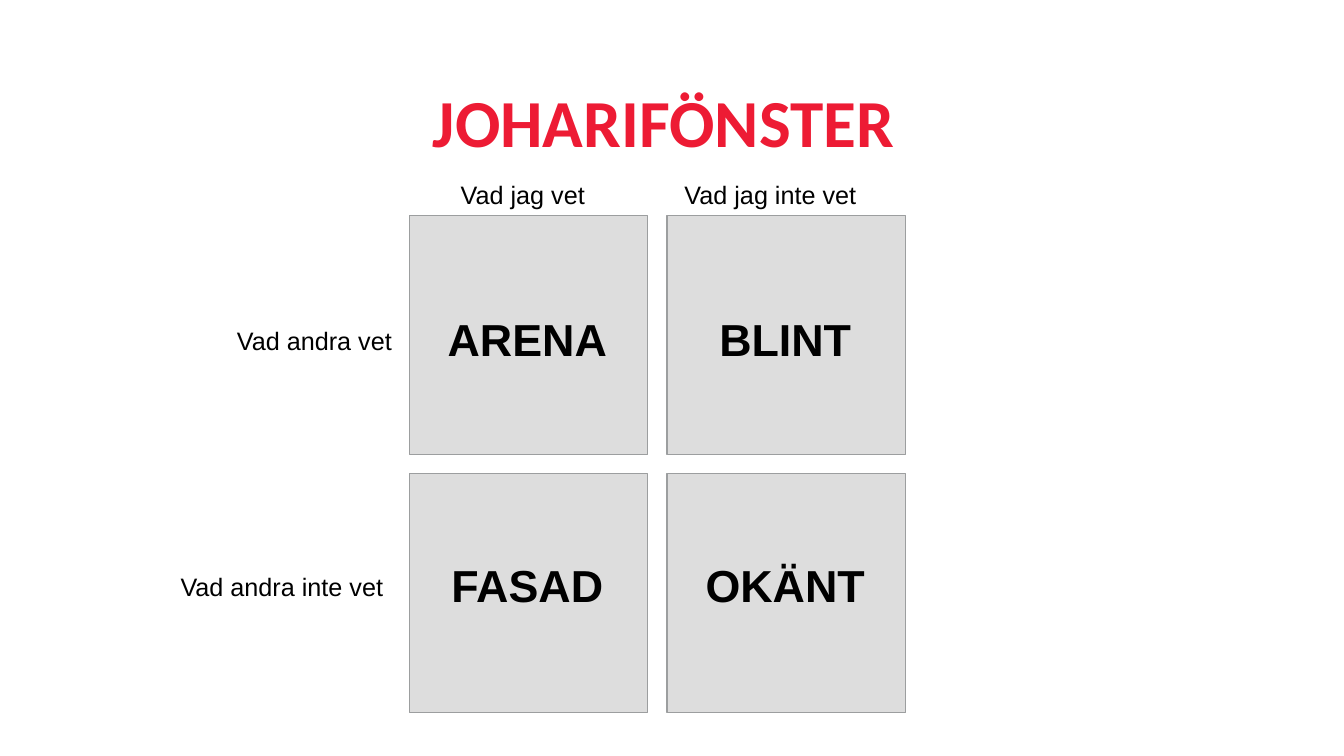
from pptx import Presentation
from pptx.dml.color import RGBColor
from pptx.enum.shapes import MSO_SHAPE as Kind
from pptx.enum.text import MSO_ANCHOR as Anchor, MSO_AUTO_SIZE as Fit, PP_ALIGN as Align
from pptx.util import Cm, Pt

RED, BLACK, GREY, EDGE = "ED1B34", "000000", "DDDDDD", "9C9E9F"

# Window grid in centimetres
LEFT, TOP, SIDE, STEP = 10.31, 5.44, 6.02, 6.5
WORDS = [["ARENA", "BLINT"], ["FASAD", "OKÄNT"]]
# Axis labels: text, left, top, width
LABELS = [
    ("Vad jag vet", 11.28, 4.19, 4.37),
    ("Vad jag inte vet", 16.92, 4.19, 5.23),
    ("Vad andra vet", 5.64, 7.87, 4.78),
    ("Vad andra inte vet", 4.22, 14.07, 6.02),
]


def color(code):
    return RGBColor.from_string(code)


def place(shape, left, top, width, height):
    shape.left, shape.top = Cm(left), Cm(top)
    shape.width, shape.height = Cm(width), Cm(height)


def write(shape, text, size, tint=BLACK, bold=False, align=Align.LEFT,
          anchor=Anchor.TOP, face="Arial"):
    frame = shape.text_frame
    frame.word_wrap = True
    frame.auto_size = Fit.NONE
    frame.vertical_anchor = anchor
    frame.margin_left = frame.margin_right = Cm(0.33)
    frame.margin_top = frame.margin_bottom = Cm(0.33)
    para = frame.paragraphs[0]
    para.text = text
    para.alignment = align
    font = para.font
    font.name, font.size, font.bold = face, Pt(size), bold
    font.color.rgb = color(tint)
    return para


def add_title(slide, text):
    title = slide.shapes.title
    place(title, 1.14, 0.79, 31.55, 3.58)
    para = write(title, text, 48, RED, True, Align.CENTER, Anchor.BOTTOM, "Calibri")
    para.line_spacing = 0.8


def add_pane(slide, left, top):
    pane = slide.shapes.add_shape(Kind.RECTANGLE, Cm(left), Cm(top), Cm(SIDE), Cm(SIDE))
    pane.shadow.inherit = False
    pane.fill.solid()
    pane.fill.fore_color.rgb = color(GREY)
    pane.line.color.rgb = color(EDGE)
    pane.line.width = Pt(0.75)


def add_text(slide, text, left, top, width, height, size, **style):
    box = slide.shapes.add_textbox(Cm(left), Cm(top), Cm(width), Cm(height))
    write(box, text, size, **style)


def main():
    deck = Presentation()
    deck.slide_width, deck.slide_height = Cm(33.87), Cm(19.05)
    slide = deck.slides.add_slide(deck.slide_layouts[5])
    add_title(slide, "JOHARIFÖNSTER ")

    # Four panes with their words
    for row, words in enumerate(WORDS):
        for col, word in enumerate(words):
            add_pane(slide, LEFT + col * STEP, TOP + row * STEP)
            add_text(slide, word, 8.31 + col * STEP, 7.52 + row * 6.2, 9.96, 1.5,
                     32, bold=True, align=Align.CENTER)

    # Labels above and beside the panes
    for text, left, top, width in LABELS:
        add_text(slide, text, left, top, width, 0.97, 18)

    deck.save("out.pptx")


if __name__ == "__main__":
    main()
